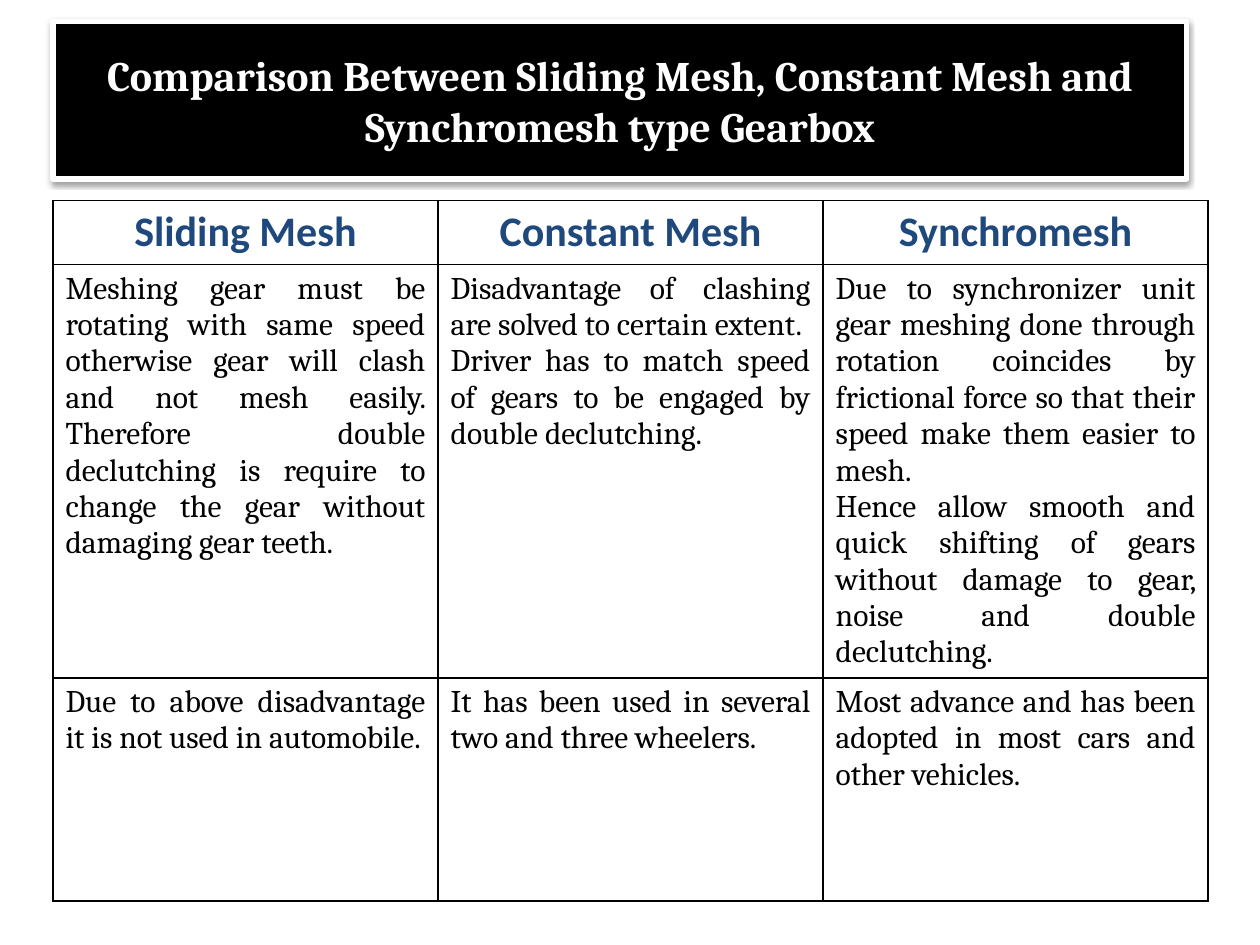
from dataclasses import dataclass

from lxml import etree
from pptx import Presentation
from pptx.dml.color import RGBColor
from pptx.enum.shapes import MSO_SHAPE
from pptx.enum.text import MSO_ANCHOR, PP_ALIGN
from pptx.oxml.ns import qn
from pptx.util import Inches, Pt

RECTANGLE = MSO_SHAPE.RECTANGLE
MIDDLE = MSO_ANCHOR.MIDDLE
CENTER = PP_ALIGN.CENTER
JUSTIFY = PP_ALIGN.JUSTIFY

BLACK = "000000"
WHITE = "FFFFFF"
NAVY = "1F497D"


@dataclass(frozen=True)
class TextStyle:
    font: str
    size: float
    color: str
    bold: bool
    align: PP_ALIGN


@dataclass(frozen=True)
class Gearbox:
    name: str
    operation: tuple[str, ...]
    usage: str


TITLE_STYLE = TextStyle("Cambria", 24, WHITE, True, CENTER)
HEADING_STYLE = TextStyle("Calibri", 24, NAVY, True, CENTER)
BODY_STYLE = TextStyle("Cambria", 18, BLACK, False, JUSTIFY)

TITLE = "Comparison Between Sliding Mesh, Constant Mesh and Synchromesh type Gearbox"
GEARBOXES = (
    Gearbox(
        "Sliding Mesh",
        ("Meshing gear must be rotating with same speed otherwise gear will clash "
         "and not mesh easily. Therefore double declutching is require to change "
         "the gear without damaging gear teeth.",),
        "Due to above disadvantage it is not used in automobile.",
    ),
    Gearbox(
        "Constant Mesh",
        ("Disadvantage of clashing are solved to certain extent.",
         "Driver has to match speed of gears to be engaged by double declutching."),
        "It has been used in several two and three wheelers.",
    ),
    Gearbox(
        "Synchromesh",
        ("Due to synchronizer unit gear meshing done through rotation coincides by "
         "frictional force so that their speed make them easier to mesh.",
         "Hence allow smooth and quick shifting of gears without damage to gear, "
         "noise and double declutching."),
        "Most advance and has been adopted in most cars and other vehicles.",
    ),
)
LEFT = 0.42
TABLE_TOP = 1.59
TABLE_WIDTH = 9.17
ROW_HEIGHTS = (0.51, 3.28, 1.77)


def rgb(color: str) -> RGBColor:
    return RGBColor.from_string(color)


def write(frame, paragraphs: tuple[str, ...], style: TextStyle) -> None:
    for index, text in enumerate(paragraphs):
        paragraph = frame.add_paragraph() if index else frame.paragraphs[0]
        paragraph.alignment = style.align
        run = paragraph.add_run()
        run.text = text
        run.font.name = style.font
        run.font.size = Pt(style.size)
        run.font.bold = style.bold
        run.font.color.rgb = rgb(style.color)


def add_shadow(shape) -> None:
    shape.shadow.inherit = False
    effects = shape._element.spPr.find(qn("a:effectLst"))
    shadow = etree.SubElement(
        effects, qn("a:outerShdw"), blurRad=str(Pt(3.1)), dist=str(Pt(1.6)),
        dir="5400000", rotWithShape="0",
    )
    color = etree.SubElement(shadow, qn("a:srgbClr"), val=BLACK)
    etree.SubElement(color, qn("a:alpha"), val="38000")


def add_title(slide) -> None:
    banner = slide.shapes.add_shape(
        RECTANGLE, Inches(LEFT), Inches(0.17), Inches(9), Inches(1.25)
    )
    banner.fill.solid()
    banner.fill.fore_color.rgb = rgb(BLACK)
    banner.line.color.rgb = rgb(WHITE)
    banner.line.width = Pt(3)
    add_shadow(banner)
    banner.text_frame.word_wrap = True
    banner.text_frame.vertical_anchor = MIDDLE
    write(banner.text_frame, (TITLE,), TITLE_STYLE)


def add_borders(cell) -> None:
    properties = cell._tc.get_or_add_tcPr()
    for position, side in enumerate(("lnL", "lnR", "lnT", "lnB")):
        border = etree.Element(qn(f"a:{side}"), w=str(Pt(1)))
        fill = etree.SubElement(border, qn("a:solidFill"))
        etree.SubElement(fill, qn("a:srgbClr"), val=BLACK)
        properties.insert(position, border)


def add_comparison(slide) -> None:
    table = slide.shapes.add_table(
        len(ROW_HEIGHTS), len(GEARBOXES), Inches(LEFT), Inches(TABLE_TOP),
        Inches(TABLE_WIDTH), Inches(sum(ROW_HEIGHTS)),
    ).table
    table.first_row = False
    table.horz_banding = False
    for row, height in zip(table.rows, ROW_HEIGHTS):
        row.height = Inches(height)
    for column, gearbox in enumerate(GEARBOXES):
        table.columns[column].width = Inches(TABLE_WIDTH / len(GEARBOXES))
        entries = (
            ((gearbox.name,), HEADING_STYLE),
            (gearbox.operation, BODY_STYLE),
            ((gearbox.usage,), BODY_STYLE),
        )
        for row, (paragraphs, style) in enumerate(entries):
            cell = table.cell(row, column)
            cell.fill.background()
            add_borders(cell)
            write(cell.text_frame, paragraphs, style)


def main() -> None:
    presentation = Presentation()
    presentation.slide_width = Inches(10)
    presentation.slide_height = Inches(7.5)
    slide = presentation.slides.add_slide(presentation.slide_layouts[6])
    add_comparison(slide)
    add_title(slide)
    presentation.save("out.pptx")


if __name__ == "__main__":
    main()
